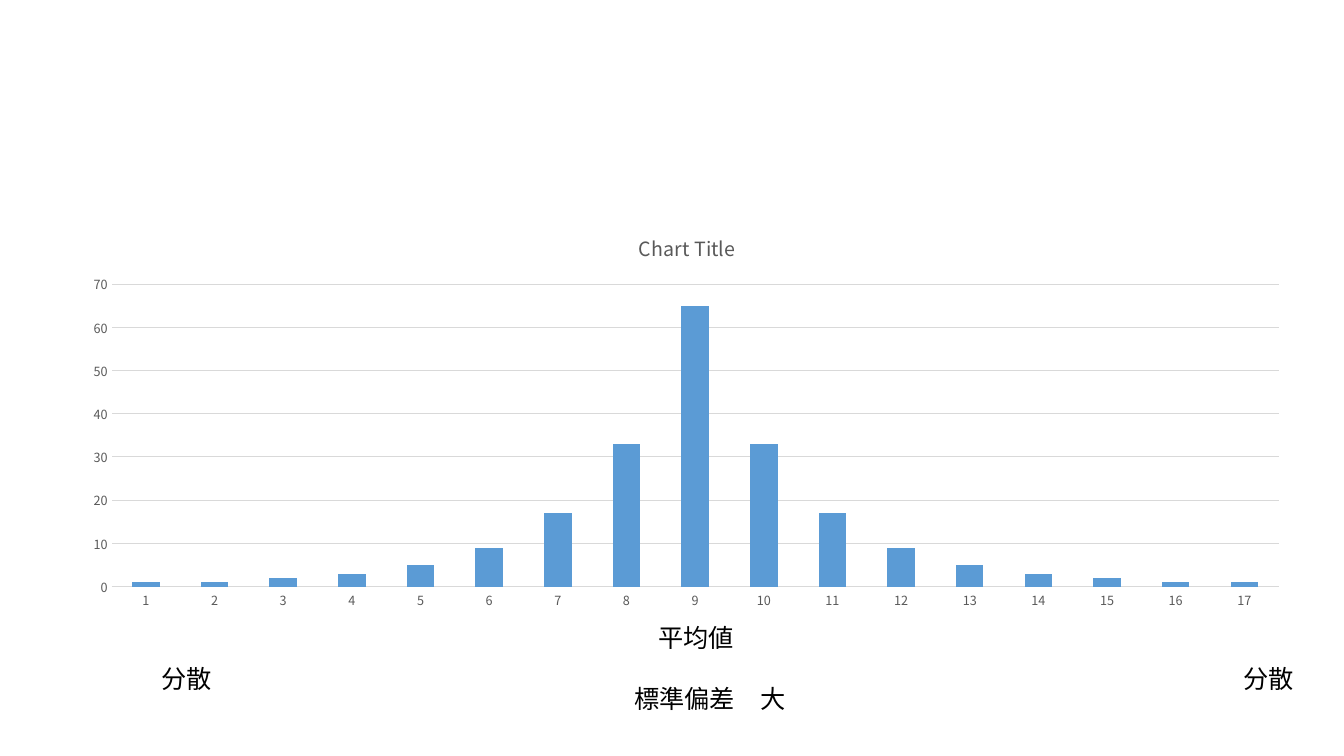
from pptx import Presentation
from pptx.chart.data import CategoryChartData
from pptx.dml.color import RGBColor
from pptx.enum.chart import XL_CHART_TYPE, XL_TICK_MARK
from pptx.enum.text import MSO_AUTO_SIZE, MSO_VERTICAL_ANCHOR
from pptx.oxml import parse_xml
from pptx.oxml.ns import nsdecls, qn
from pptx.util import Inches, Pt

FONT = "Noto Sans CJK JP"
COLORS = {"bar": "5B9BD5", "grid": "D9D9D9", "label": "595959", "text": "000000"}


def set_font(font, size, color):
    font.name = FONT
    font.size = Pt(size)
    font.bold = False
    font.color.rgb = RGBColor.from_string(COLORS[color])


def set_line(line):
    line.color.rgb = RGBColor.from_string(COLORS["grid"])
    line.width = Pt(0.75)


presentation = Presentation()
presentation.slide_width = Inches(13.33)
presentation.slide_height = Inches(7.5)
slide = presentation.slides.add_slide(presentation.slide_layouts[6])

rising = [1, 1, 2, 3, 5, 9, 17, 33]
frequencies = rising + [65] + rising[::-1]
chart_data = CategoryChartData()
chart_data.categories = [str(number + 1) for number in range(len(frequencies))]
chart_data.add_series("Series 1", frequencies)

chart = slide.shapes.add_chart(
    XL_CHART_TYPE.COLUMN_STACKED,
    Inches(0.69), Inches(2.12), Inches(12.25), Inches(4), chart_data,
).chart
set_font(chart.font, 10, "text")
chart.has_legend = False
chart.has_title = True
title = chart.chart_title.text_frame.paragraphs[0]
title.text = "Chart Title"
set_font(title.font, 14, "label")

plot = chart.plots[0]
plot.gap_width = 150
plot.overlap = 100
plot.vary_by_categories = False
bars = plot.series[0].format.fill
bars.solid()
bars.fore_color.rgb = RGBColor.from_string(COLORS["bar"])

for axis in (chart.category_axis, chart.value_axis):
    axis.major_tick_mark = XL_TICK_MARK.NONE
    axis.minor_tick_mark = XL_TICK_MARK.NONE
    set_font(axis.tick_labels.font, 9, "label")
set_line(chart.category_axis.format.line)
chart.value_axis.format.line.fill.background()
chart.value_axis.minimum_scale = 0
chart.value_axis.maximum_scale = 70
chart.value_axis.major_unit = 10
chart.value_axis.has_major_gridlines = True
set_line(chart.value_axis.major_gridlines.format.line)

plot_area = chart.element.find(".//" + qn("c:plotArea"))
for layout in plot_area.findall(qn("c:layout")):
    plot_area.remove(layout)
plot_area.insert(0, parse_xml(
    f'<c:layout {nsdecls("c")}><c:manualLayout><c:layoutTarget val="inner"/>'
    '<c:xMode val="edge"/><c:yMode val="edge"/><c:x val="0.034"/><c:y val="0.175"/>'
    '<c:w val="0.945"/><c:h val="0.75"/></c:manualLayout></c:layout>'
))

captions = [
    ("平均値", 6.43, 6.12, 0.96),
    ("標準偏差　大", 6.19, 6.73, 1.72),
    ("分散", 1.5, 6.53, 0.71),
    ("分散", 12.23, 6.53, 0.71),
]
for text, left, top, width in captions:
    shape = slide.shapes.add_textbox(Inches(left), Inches(top), Inches(width), Inches(0.4))
    frame = shape.text_frame
    frame.word_wrap = False
    frame.auto_size = MSO_AUTO_SIZE.SHAPE_TO_FIT_TEXT
    frame.vertical_anchor = MSO_VERTICAL_ANCHOR.TOP
    paragraph = frame.paragraphs[0]
    run = paragraph.add_run()
    run.text = text
    set_font(run.font, 18, "text")
    run.font._element.append(parse_xml(f'<a:ea {nsdecls("a")} typeface="{FONT}"/>'))

presentation.save("out.pptx")
